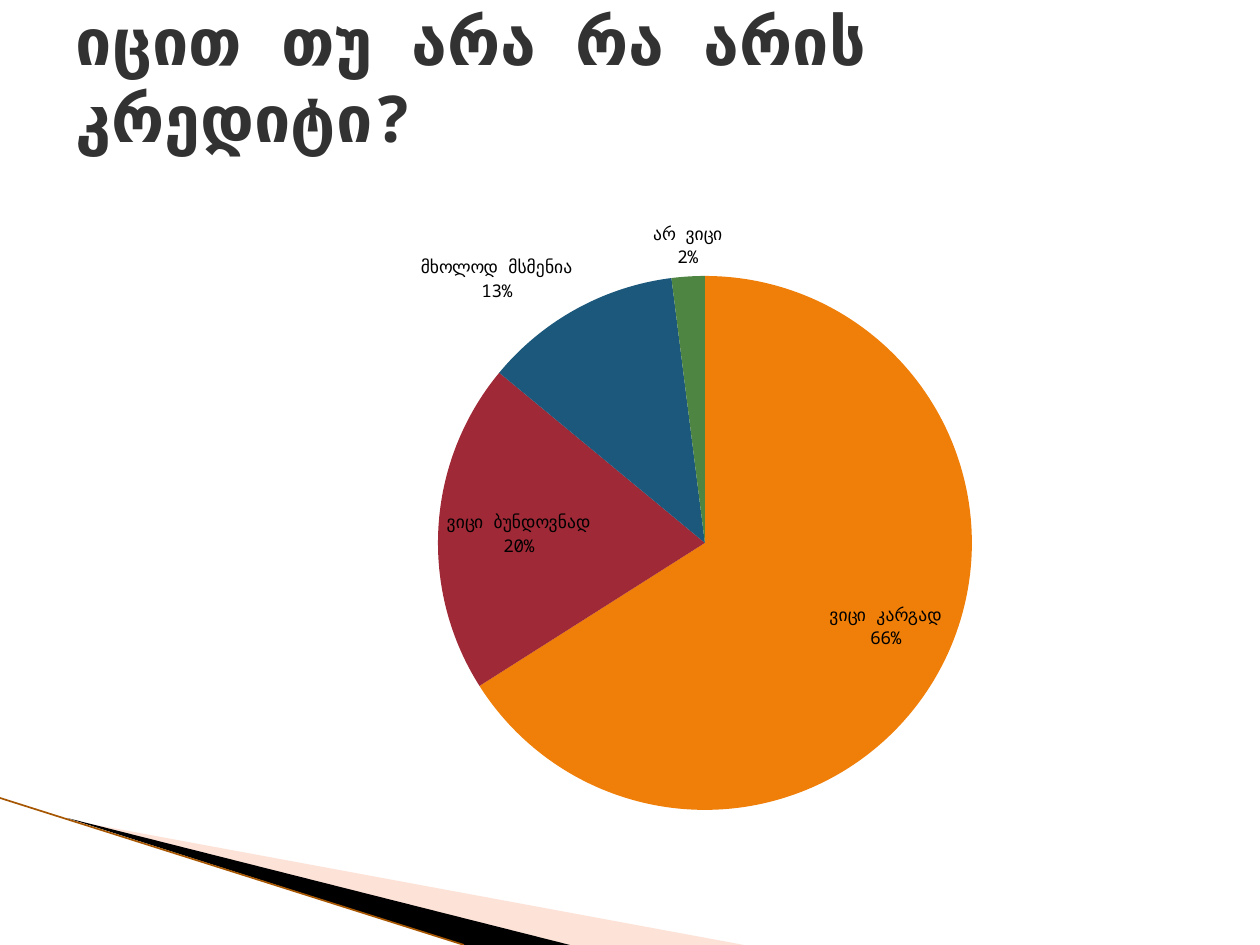
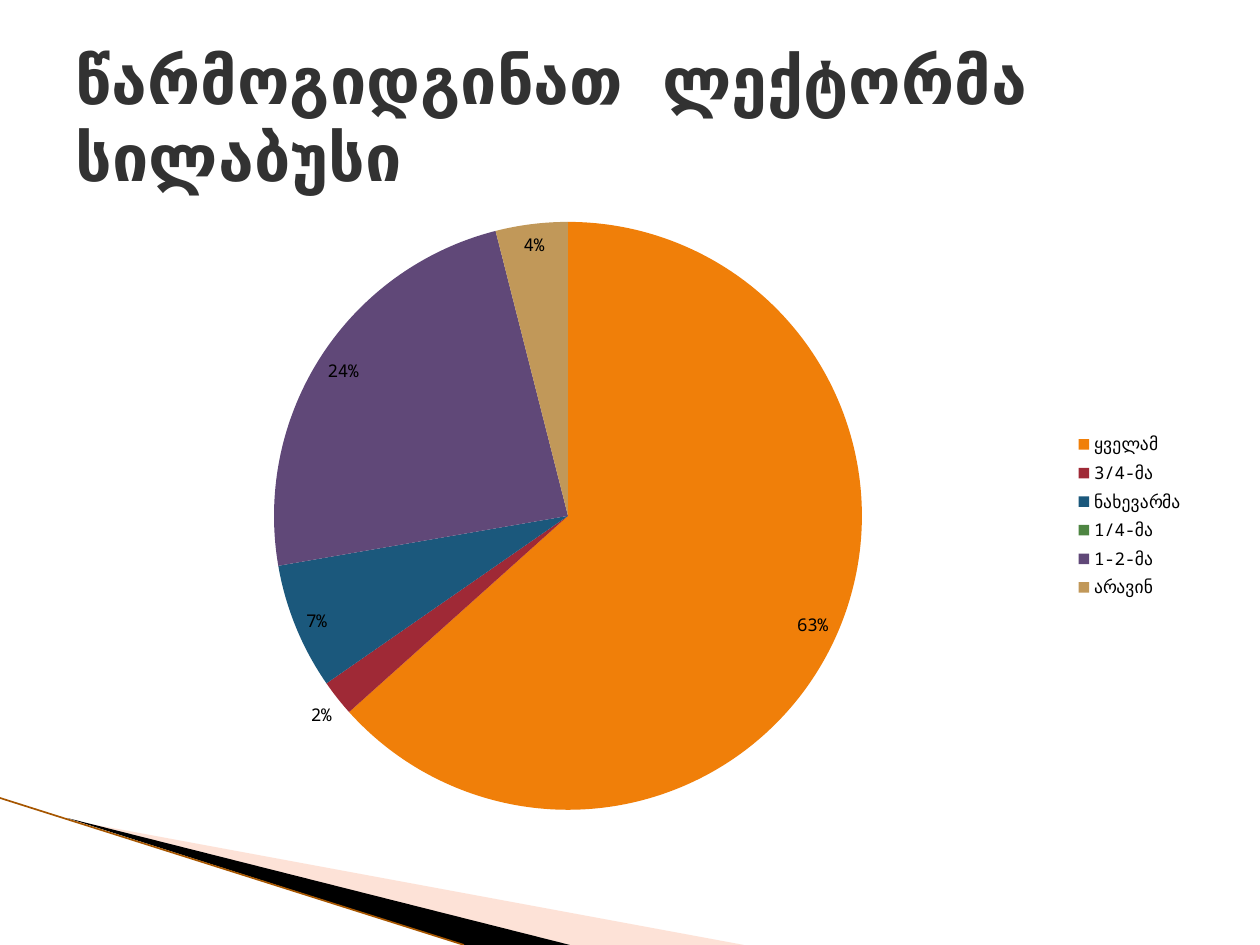
from dataclasses import dataclass

from lxml import etree
from pptx import Presentation
from pptx.chart.data import CategoryChartData
from pptx.dml.color import RGBColor
from pptx.enum.chart import XL_CHART_TYPE, XL_LABEL_POSITION, XL_LEGEND_POSITION
from pptx.enum.shapes import MSO_CONNECTOR
from pptx.enum.text import MSO_ANCHOR, PP_ALIGN
from pptx.oxml import parse_xml
from pptx.oxml.ns import nsdecls, qn
from pptx.util import Emu, Pt

PX = 914400 // 126
PIE = XL_CHART_TYPE.PIE
BEST_FIT = XL_LABEL_POSITION.BEST_FIT
OUTSIDE_END = XL_LABEL_POSITION.OUTSIDE_END
LEGEND_RIGHT = XL_LEGEND_POSITION.RIGHT
MIDDLE = MSO_ANCHOR.MIDDLE
LEFT = PP_ALIGN.LEFT
STRAIGHT = MSO_CONNECTOR.STRAIGHT


@dataclass(frozen=True)
class Theme:
    font: str = "Noto Sans Mono"
    title_size: float = 36.9
    chart_size: float = 10
    title: str = "323232"
    text: str = "000000"
    wedge_light: str = "FCB79B"
    wedge_dark: str = "000000"
    edge: str = "A65600"
    slices: tuple = ("F07F09", "9F2936", "1B587C", "4E8542", "604878", "C19859")


THEME = Theme()
SLIDE_SIZE = (1260, 945)
CHART_BOX = (63, 204, 1134, 624)
CORNER_BOX = (0, 798, 744, 147)


def emu(*lengths):
    return [Emu(n * PX) for n in lengths]


def format_font(font, size, color, bold=False):
    font.name, font.size, font.bold = THEME.font, Pt(size), bold
    font.color.rgb = RGBColor.from_string(color)


def add_wedge(s, points, color, opacity=100):
    (x, y), *rest = points
    builder = s.shapes.build_freeform(x, y, scale=PX)
    builder.add_line_segments(rest, close=True)
    sp = builder.convert_to_shape()
    sp.shadow.inherit = False
    sp.line.fill.background()
    sp.fill.solid()
    sp.fill.fore_color.rgb = RGBColor.from_string(color)
    if opacity < 100:
        clr = sp.fill._xPr.find(".//" + qn("a:srgbClr"))
        etree.SubElement(clr, qn("a:alpha"), val=str(opacity * 1000))


def add_corner(s, box):
    """Draw the wedges and the edge line at the lower left."""
    x, y, w, h = box
    bottom = y + h
    add_wedge(s, [(x + 69, y + 22), (x + w, bottom), (x + 570, bottom)],
              THEME.wedge_light, opacity=40)
    add_wedge(s, [(x + 67, y + 20), (x + 570, bottom), (x + 464, bottom)],
              THEME.wedge_dark)
    edge = s.shapes.add_connector(STRAIGHT, *emu(x, y, x + 464, bottom))
    edge.line.color.rgb = RGBColor.from_string(THEME.edge)
    edge.line.width = Pt(0.95)
    etree.SubElement(edge._element.spPr, qn("a:effectLst"))


def set_title(s, text, box):
    sp = s.shapes.title
    sp.left, sp.top, sp.width, sp.height = emu(*box)
    tf = sp.text_frame
    tf.word_wrap, tf.vertical_anchor = True, MIDDLE
    p = tf.paragraphs[0]
    p.alignment = LEFT
    r = p.add_run()
    r.text = text
    format_font(r.font, THEME.title_size, THEME.title, bold=True)


def place_pie(chart, box, pie):
    """Fix the pie, given as left, top and diameter, inside the chart box."""
    x, y, w, h = box
    left, top, size = pie
    fractions = {"x": (left - x) / w, "y": (top - y) / h,
                 "w": size / w, "h": size / h}
    parts = '<c:layoutTarget val="inner"/><c:xMode val="edge"/><c:yMode val="edge"/>'
    parts += "".join(f'<c:{k} val="{v:.4f}"/>' for k, v in fractions.items())
    area = chart._chartSpace.chart.plotArea
    for old in area.findall(qn("c:layout")):
        area.remove(old)
    area.insert(0, parse_xml(
        f'<c:layout {nsdecls("c")}><c:manualLayout>{parts}</c:manualLayout></c:layout>'))


def set_labels(series, with_category):
    labels = series.data_labels
    labels.show_value = False
    labels.show_percentage = True
    labels.show_category_name = with_category
    labels.position = BEST_FIT
    if with_category:
        separator = etree.Element(qn("c:separator"))
        separator.text = "\n"
        labels._element.find(qn("c:showBubbleSize")).addnext(separator)


def set_label_text(point, lines):
    label = point.data_label
    tf = label.text_frame
    tf.text = "\n".join(lines)
    for p in tf.paragraphs:
        for r in p.runs:
            format_font(r.font, THEME.chart_size, THEME.text)
    label.position = OUTSIDE_END


def add_pie(s, box, pie, shares, legend, label_texts):
    data = CategoryChartData(number_format="0")
    data.categories = list(shares)
    data.add_series("Series 1", list(shares.values()))
    chart = s.shapes.add_chart(PIE, *emu(*box), data).chart
    format_font(chart.font, THEME.chart_size, THEME.text)
    chart.has_title = False
    chart.has_legend = legend
    if legend:
        chart.legend.position = LEGEND_RIGHT
        chart.legend.include_in_layout = False
    plot = chart.plots[0]
    plot.vary_by_categories = True
    series = plot.series[0]
    for i, color in enumerate(THEME.slices[:len(shares)]):
        fmt = series.points[i].format
        fmt.fill.solid()
        fmt.fill.fore_color.rgb = RGBColor.from_string(color)
        fmt.line.fill.background()
    set_labels(series, with_category=not legend)
    for i, category in enumerate(shares):
        if category in label_texts:
            set_label_text(series.points[i], [category, label_texts[category]])
    place_pie(chart, box, pie)


def add_survey_slide(prs, title, title_box, pie, shares, legend=False, label_texts=None):
    s = prs.slides.add_slide(prs.slide_layouts.get_by_name("Title Only"))
    add_corner(s, CORNER_BOX)
    set_title(s, title, title_box)
    add_pie(s, CHART_BOX, pie, shares, legend, label_texts or {})


def main():
    prs = Presentation()
    prs.slide_width, prs.slide_height = emu(*SLIDE_SIZE)
    add_survey_slide(
        prs, "იცით თუ არა რა არის კრედიტი?", (63, 0, 1134, 156), (438, 276, 534),
        {"ვიცი კარგად": 66, "ვიცი ბუნდოვნად": 20, "მხოლოდ მსმენია": 12, "არ ვიცი": 2},
        label_texts={"მხოლოდ მსმენია": "13%"})
    add_survey_slide(
        prs, "წარმოგიდგინათ ლექტორმა სილაბუსი", (63, 38, 1134, 158), (274, 222, 588),
        {"ყველამ": 64, "3/4-მა": 2, "ნახევარმა": 7, "1/4-მა": 0, "1-2-მა": 24, "არავინ": 4},
        legend=True)
    prs.save("out.pptx")


if __name__ == "__main__":
    main()
